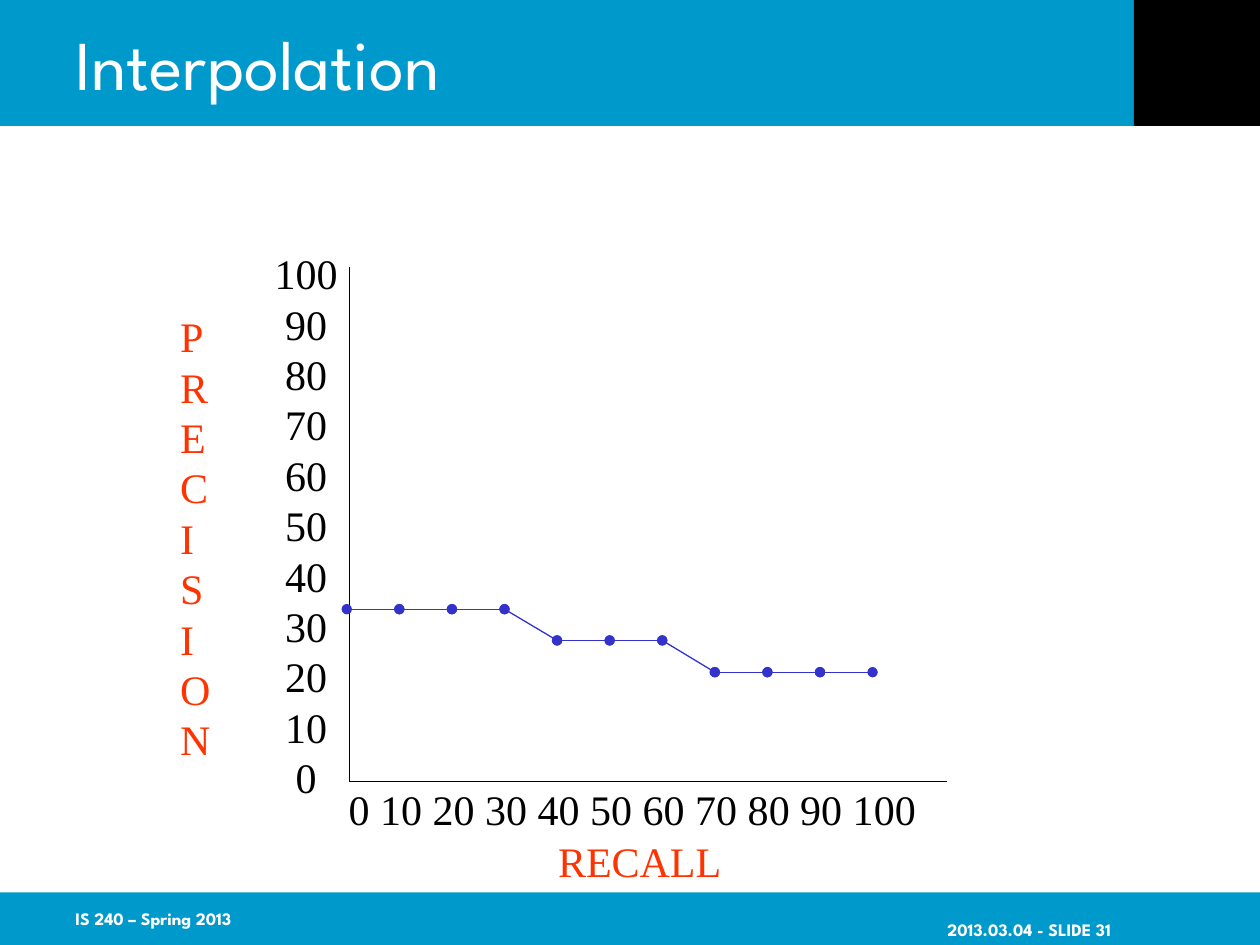
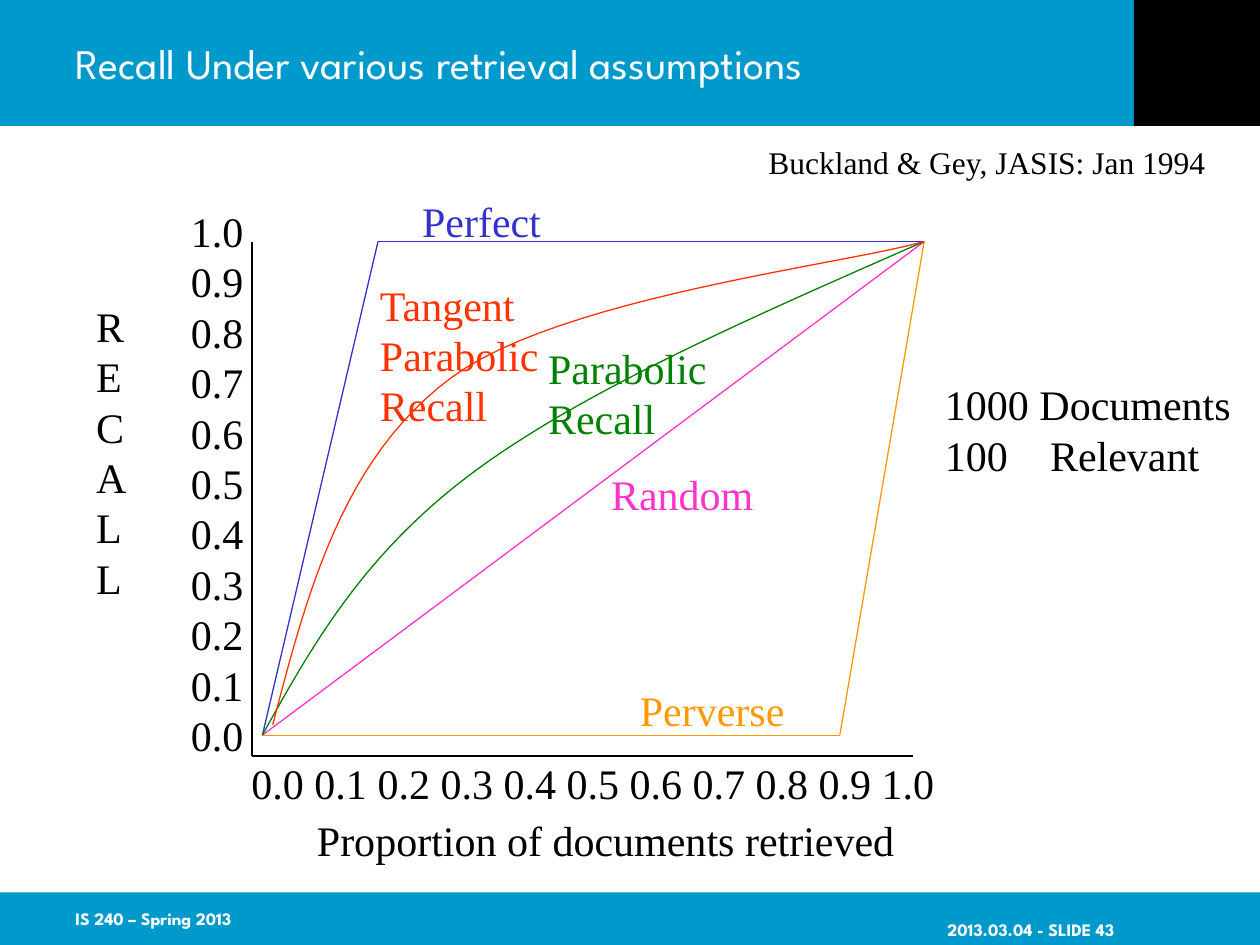
"""Build two lecture slides on precision and recall curves."""
import lxml.etree
import pptx
import pptx.dml.color
import pptx.enum.shapes
import pptx.enum.text
import pptx.oxml.ns
import pptx.util

Cm, Pt = pptx.util.Cm, pptx.util.Pt
qn = pptx.oxml.ns.qn
rgb = pptx.dml.color.RGBColor.from_string
ALIGN = pptx.enum.text.PP_ALIGN
MIDDLE = pptx.enum.text.MSO_ANCHOR.MIDDLE
RECTANGLE = pptx.enum.shapes.MSO_SHAPE.RECTANGLE
STRAIGHT = pptx.enum.shapes.MSO_CONNECTOR.STRAIGHT

BAND, BLACK, WHITE = "0099CC", "000000", "FFFFFF"
RED, BLUE, GREEN = "FF3300", "3333CC", "008000"
PINK, ORANGE = "FF33CC", "FF9900"
TITLE_FONT = "League Spartan"
LABEL = {"name": "Times New Roman", "size": Pt(24)}
SOURCE = {"name": "Times New Roman", "size": Pt(18)}
FOOTER = {"name": TITLE_FONT, "size": Pt(10), "bold": True}


def add_text(slide, lines, box, color=BLACK, style=LABEL, align=ALIGN.LEFT, wrap=False):
    """Add a text box with one paragraph per line and return its text frame."""
    frame = slide.shapes.add_textbox(*map(Cm, box)).text_frame
    frame.word_wrap = wrap
    for index, line in enumerate(lines):
        paragraph = frame.add_paragraph() if index else frame.paragraphs[0]
        paragraph.alignment = align
        paragraph.line_spacing = Pt(style["size"].pt * 1.2) if style is not FOOTER else None
        run = paragraph.add_run()
        run.text = line
        for name, value in style.items():
            setattr(run.font, name, value)
        run.font.color.rgb = rgb(color)
    return frame


def add_lines(slide, points, color, dots=False):
    """Join consecutive points with connectors, with round ends if dots is set."""
    for start, end in zip(points, points[1:]):
        connector = slide.shapes.add_connector(STRAIGHT, *map(Cm, start + end))
        connector.line.color.rgb = rgb(color)
        connector.line.width = Pt(0.75)
        properties = connector.element.spPr
        if dots:
            for tag in ("a:headEnd", "a:tailEnd"):
                lxml.etree.SubElement(properties.find(qn("a:ln")), qn(tag), type="oval")
        lxml.etree.SubElement(properties, qn("a:effectLst"))


presentation = pptx.Presentation()
presentation.slide_width, presentation.slide_height = Cm(25.4), Cm(19.05)

bands = [
    ((0, 0, 25.4, 2.54), BAND),
    ((0, 17.99, 25.4, 1.06), BAND),
    ((22.86, 0, 2.54, 2.54), BLACK),
]
slides = []
for title_text, title_size, number in [
    ("Interpolation", 40, 31),
    ("Recall Under various retrieval assumptions", 24, 43),
]:
    slide = presentation.slides.add_slide(presentation.slide_layouts[5])
    slides.append(slide)
    for box, color in bands:
        band = slide.shapes.add_shape(RECTANGLE, *map(Cm, box))
        band.shadow.inherit = False
        band.fill.solid()
        band.fill.fore_color.rgb = rgb(color)
        band.line.fill.background()

    for text, left, top_margin in [
        (f"2013.03.04 - SLIDE {number}", 18.85, 0.58),
        ("IS 240 – Spring 2013", 1.27, 0.13),
    ]:
        frame = add_text(slide, [text], (left, 17.99, 5.29, 1.06), WHITE, FOOTER, wrap=True)
        frame.vertical_anchor = MIDDLE
        frame.margin_top = Cm(top_margin)
        frame.margin_right = 0

    title = slide.shapes.title
    band.element.addnext(title.element)
    placement = {"left": 1.27, "top": 0, "width": 21.59, "height": 2.54}
    for name, value in placement.items():
        setattr(title, name, Cm(value))
    title.text_frame.text = title_text
    title.text_frame.auto_size = pptx.enum.text.MSO_AUTO_SIZE.NONE
    title.text_frame.vertical_anchor = MIDDLE
    paragraph = title.text_frame.paragraphs[0]
    paragraph.alignment = ALIGN.LEFT
    run = paragraph.runs[0]
    for name, value in {"name": TITLE_FONT, "size": Pt(title_size)}.items():
        setattr(run.font, name, value)
    run.font.color.rgb = rgb(WHITE)

interpolation, assumptions = slides

percents = [str(value) for value in range(0, 101, 10)]
add_text(interpolation, percents[::-1], (5.28, 4.87, 1.78, 11.4), align=ALIGN.CENTER)
add_lines(interpolation, [(7.04, 5.38), (7.04, 15.75), (19.1, 15.75)], BLACK)
add_text(interpolation, [" ".join(percents)], (6.78, 15.67, 11.94, 1.27))
add_text(interpolation, "PRECISION", (3.38, 6.14, 1.12, 9.37), RED)
add_text(interpolation, ["RECALL"], (11, 16.72, 3.81, 1.27), RED)
precision_heights = [12.28] * 4 + [12.91] * 3 + [13.55] * 4
precision_points = [(6.99 + 1.06 * step, y) for step, y in enumerate(precision_heights)]
add_lines(interpolation, precision_points, BLUE, dots=True)

fractions = [f"{value / 10:.1f}" for value in range(11)]
add_text(assumptions, ["Buckland & Gey, JASIS: Jan 1994"], (15.24, 2.75, 9.73, 1.02),
         style=SOURCE, wrap=True)
add_lines(assumptions, [(5.08, 4.87), (5.08, 15.24), (18.41, 15.24)], BLACK)
add_text(assumptions, fractions[::-1], (3.6, 4.02, 1.57, 11.4))
add_text(assumptions, "RECALL", (1.69, 5.93, 1.12, 7.37))
add_text(assumptions, [" ".join(fractions)], (4.82, 15.14, 14.27, 1.27))
add_text(assumptions, ["Proportion of documents retrieved"], (6.14, 16.3, 12.14, 1.27))

origin, complete = (5.29, 14.82), (18.63, 4.87)
add_lines(assumptions, [origin, complete], PINK)
add_lines(assumptions, [origin, (7.62, 4.87), complete], BLUE)
add_lines(assumptions, [origin, (16.93, 14.82), complete], ORANGE)

curves = [
    (GREEN, [origin, (6.3, 13), (7.32, 11.18), (9.53, 9.53),
             (11.76, 7.87), (15.19, 6.38), complete]),
    (RED, [(5.5, 14.61), (6.2, 11.91), (6.91, 9.25), (9.09, 7.62),
           (11.28, 5.99), (17.04, 5.33), complete]),
]
STEPS = 24
for color, controls in curves:
    curve_points = []
    for first in (0, 3):
        for step in range(1, STEPS + 1):
            t = step / STEPS
            weights = ((1 - t) ** 3, 3 * t * (1 - t) ** 2, 3 * t ** 2 * (1 - t), t ** 3)
            section = zip(*controls[first:first + 4])
            curve_points.append(tuple(
                Cm(sum(weight * value for weight, value in zip(weights, axis)))
                for axis in section))
    builder = assumptions.shapes.build_freeform(*map(Cm, controls[0]))
    builder.add_line_segments(curve_points, close=False)
    curve = builder.convert_to_shape()
    curve.shadow.inherit = False
    curve.fill.background()
    curve.line.color.rgb = rgb(color)
    curve.line.width = Pt(0.75)

for lines, box, color in [
    (["Random"], (12.07, 9.31, 3.38, 1.27), PINK),
    (["Perfect"], (8.26, 3.81, 2.92, 1.27), BLUE),
    (["Perverse"], (12.65, 13.67, 3.43, 1.27), ORANGE),
    (["Tangent", "Parabolic", "Recall"], (7.41, 5.5, 3.71, 3.3), RED),
    (["Parabolic", "Recall"], (10.8, 6.77, 3.71, 2.29), GREEN),
]:
    add_text(assumptions, lines, box, color)

collection = add_text(assumptions, ["1000 Documents", "100\tRelevant"], (18.8, 7.51, 6.27, 2.29))
tab_list = lxml.etree.SubElement(collection.paragraphs[1]._p.get_or_add_pPr(), qn("a:tabLst"))
lxml.etree.SubElement(tab_list, qn("a:tab"), pos=str(Cm(2.12)), algn="l")

presentation.save("out.pptx")
